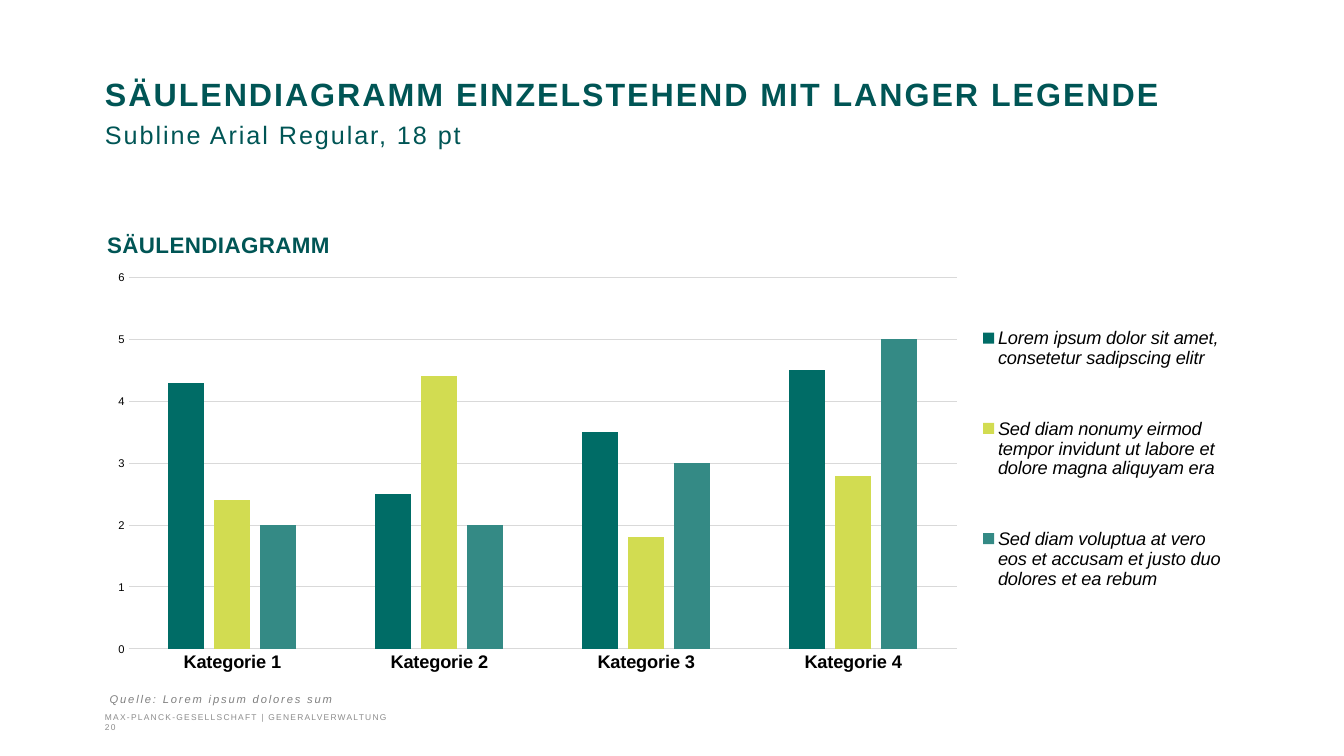
from lxml import etree
from pptx import Presentation
from pptx.chart import data
from pptx.dml import color
from pptx.enum import chart as charts, text
from pptx.oxml import ns
from pptx.util import Pt


def rgb(value):
    return color.RGBColor.from_string(value)


class SlideBuilder:
    font_name = "Arial"
    green = "005555"
    black = "000000"
    grid = "D9D9D9"

    def __init__(self, slide):
        self.slide = slide

    def style(self, font, size, ink, bold=False, italic=False):
        font.name = self.font_name
        font.size = Pt(size)
        font.bold = bold
        font.italic = italic
        font.color.rgb = rgb(ink)

    def run(self, paragraph, content, size, ink, spacing, bold=False, italic=False):
        run = paragraph.add_run()
        run.text = content
        self.style(run.font, size, ink, bold, italic)
        run.font._element.set("spc", str(round(spacing * 100)))

    def text_box(self, left, top, width, height, wrap=True, anchor=text.MSO_ANCHOR.TOP):
        frame = self.slide.shapes.add_textbox(Pt(left), Pt(top), Pt(width), Pt(height)).text_frame
        frame.margin_left = frame.margin_top = frame.margin_right = frame.margin_bottom = 0
        frame.word_wrap = wrap
        frame.vertical_anchor = anchor
        return frame.paragraphs[0]

    def right_tabs(self, paragraph, positions):
        tabs = etree.SubElement(paragraph._p.get_or_add_pPr(), ns.qn("a:tabLst"))
        for position in positions:
            etree.SubElement(tabs, ns.qn("a:tab"), pos=str(Pt(position)), algn="r")

    def layout(self, parent, index, x, y, w, h, inner=False):
        for old in parent.findall(ns.qn("c:layout")):
            parent.remove(old)
        layout = etree.Element(ns.qn("c:layout"))
        manual = etree.SubElement(layout, ns.qn("c:manualLayout"))
        settings = [("layoutTarget", "inner")] if inner else []
        settings += [("xMode", "edge"), ("yMode", "edge"), ("x", x), ("y", y), ("w", w), ("h", h)]
        for name, value in settings:
            etree.SubElement(manual, ns.qn(f"c:{name}"), val=str(value))
        parent.insert(index, layout)

    def axis(self, axis, size, bold=False):
        axis.major_tick_mark = axis.minor_tick_mark = charts.XL_TICK_MARK.NONE
        self.style(axis.tick_labels.font, size, self.black, bold)

    def line(self, line):
        line.color.rgb = rgb(self.grid)
        line.width = Pt(0.75)

    def column_chart(self, left, top, width, height, categories, series):
        chart_data = data.CategoryChartData()
        chart_data.categories = categories
        for name, values, _ in series:
            chart_data.add_series(name, values)
        chart = self.slide.shapes.add_chart(
            charts.XL_CHART_TYPE.COLUMN_CLUSTERED,
            Pt(left), Pt(top), Pt(width), Pt(height), chart_data).chart
        self.style(chart.font, 8, self.black)
        chart.has_title = False

        plot = chart.plots[0]
        plot.vary_by_categories = False
        plot.gap_width = 219
        plot.overlap = -27
        for column, (_, _, fill) in zip(plot.series, series):
            column.format.fill.solid()
            column.format.fill.fore_color.rgb = rgb(fill)

        self.axis(chart.category_axis, 13, bold=True)
        self.line(chart.category_axis.format.line)
        value_axis = chart.value_axis
        self.axis(value_axis, 8)
        value_axis.minimum_scale, value_axis.maximum_scale, value_axis.major_unit = 0, 6, 1
        value_axis.format.line.fill.background()
        self.line(value_axis.major_gridlines.format.line)

        chart.has_legend = True
        legend = chart.legend
        legend.position = charts.XL_LEGEND_POSITION.RIGHT
        legend.include_in_layout = False
        self.style(legend.font, 13, self.black, italic=True)
        self.layout(legend._element, 1, 0.77, 0.04, 0.22, 0.87)
        plot_area = chart._chartSpace.chart.plotArea
        self.layout(plot_area, 0, 0.022, 0.037, 0.73, 0.895, inner=True)


def main():
    presentation = Presentation()
    presentation.slide_width, presentation.slide_height = Pt(960), Pt(540)
    slide = presentation.slides.add_slide(presentation.slide_layouts[6])
    builder = SlideBuilder(slide)

    title = builder.text_box(75, 54.7, 811, 111)
    title.line_spacing = Pt(26)
    builder.run(title, "SÄULENDIAGRAMM EINZELSTEHEND MIT LANGER LEGENDE",
                23, builder.green, 1.4, bold=True)
    title.add_line_break()
    builder.run(title, "Subline Arial Regular, 18\u00a0pt".replace("\u00a0", " "),
                18, builder.green, 1.4)

    builder.column_chart(
        74.2, 187.2, 810, 296.6,
        [f"Kategorie {number}" for number in range(1, 5)],
        [
            ("Lorem ipsum dolor sit amet, consetetur sadipscing elitr",
             (4.3, 2.5, 3.5, 4.5), "006C66"),
            ("Sed diam nonumy eirmod tempor invidunt ut labore et dolore magna aliquyam era",
             (2.4, 4.4, 1.8, 2.8), "D2DC51"),
            ("Sed diam voluptua at vero eos et accusam et justo duo dolores et ea rebum",
             (2, 2, 3, 5), "348A85"),
        ])

    heading = builder.text_box(76.5, 165, 633, 19.4)
    builder.run(heading, "SÄULENDIAGRAMM", 16, builder.green, 0.3, bold=True)

    source = builder.text_box(75.6, 494.6, 162, 9.4, wrap=False)
    source.alignment = text.PP_ALIGN.RIGHT
    builder.run(source, "Quelle: Lorem ipsum dolores sum", 8, "808080", 1.3, italic=True)

    footer = builder.text_box(75, 508.3, 811, 14.4, wrap=False, anchor=text.MSO_ANCHOR.BOTTOM)
    builder.right_tabs(footer, (808, 850.3))
    builder.run(footer, "MAX-PLANCK-GESELLSCHAFT | GENERALVERWALTUNG\t\t20", 6, "8C8C8C", 0.9)

    presentation.save("out.pptx")


if __name__ == "__main__":
    main()
